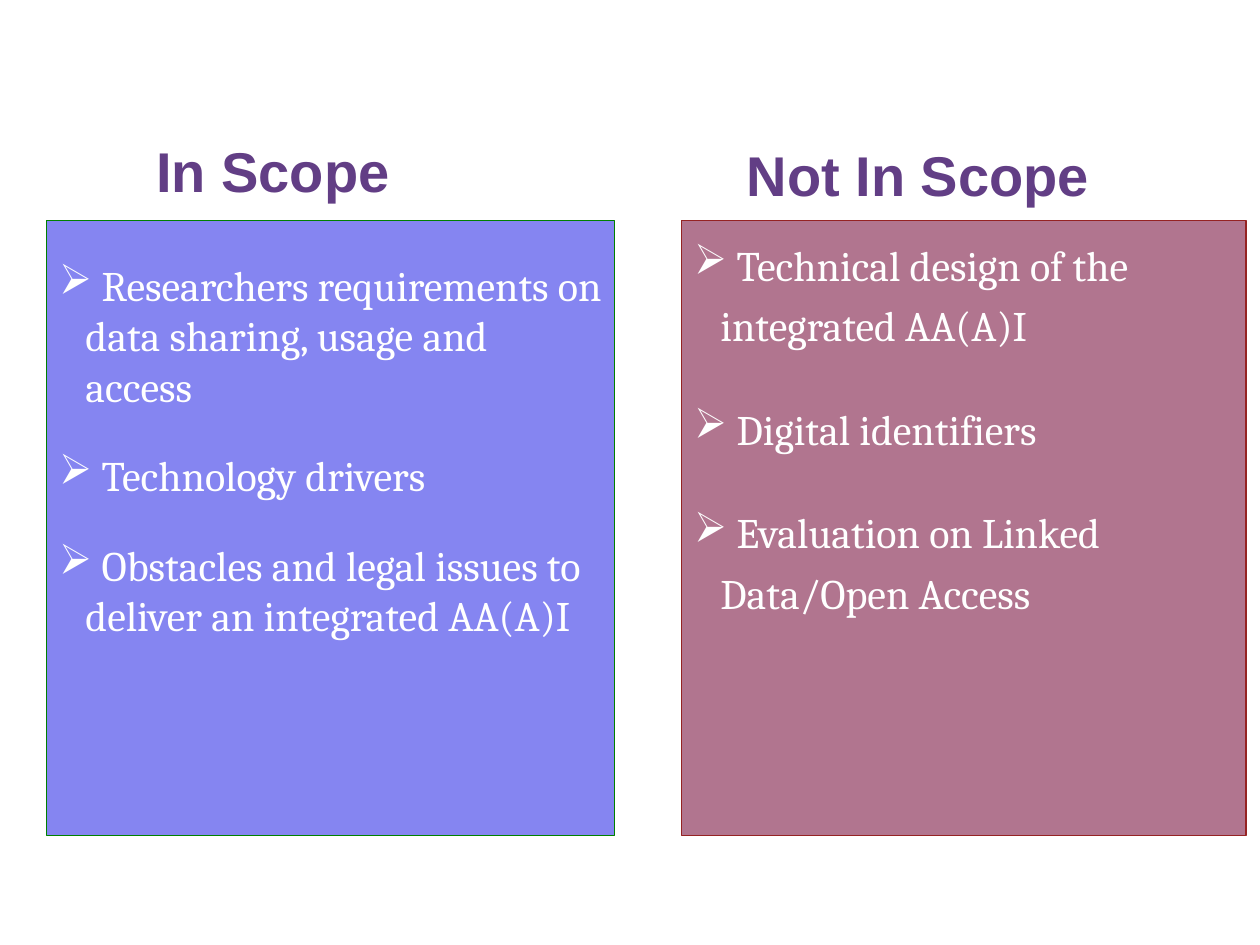
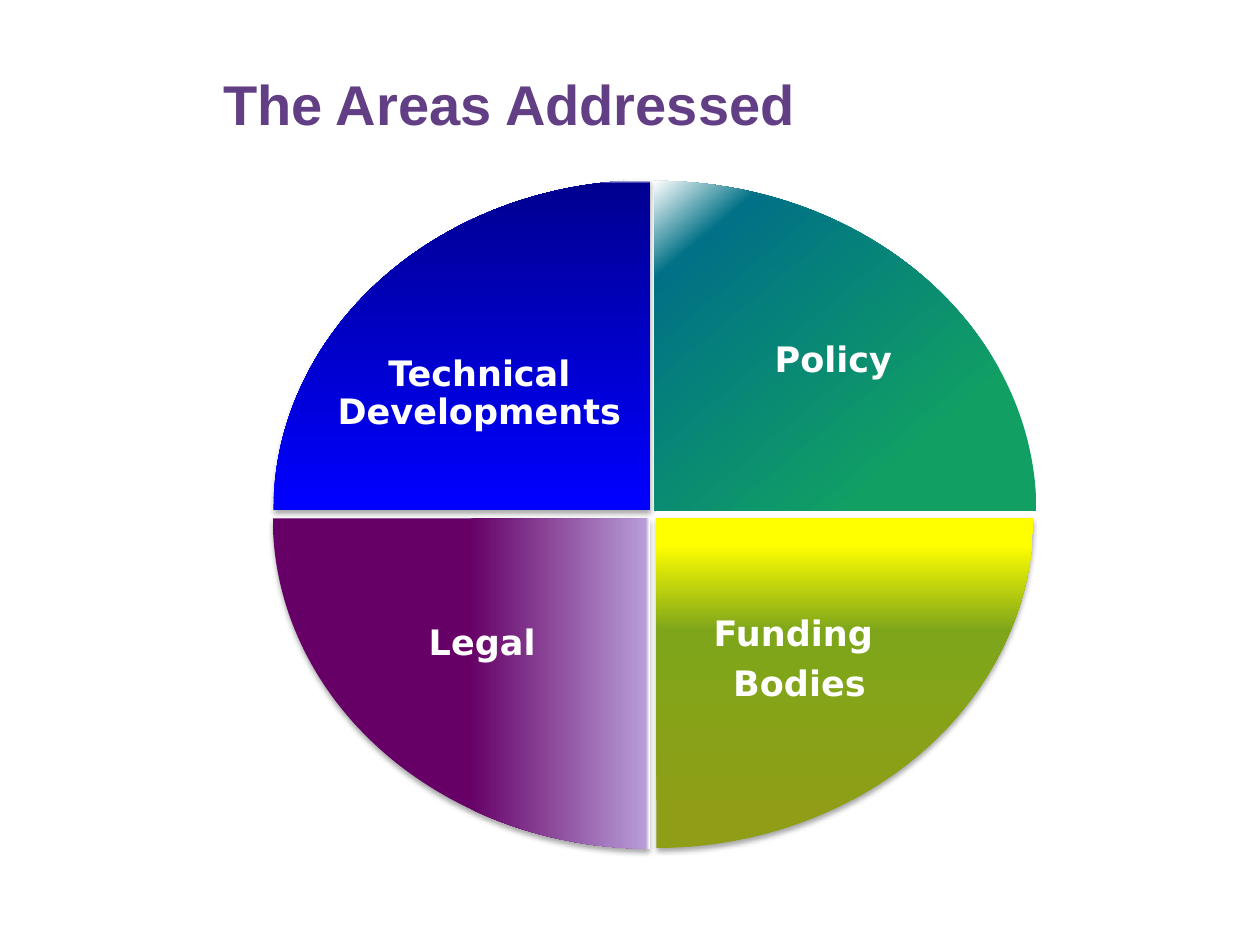
from lxml import etree
from pptx import Presentation
from pptx.dml.color import RGBColor
from pptx.enum import shapes, text
from pptx.oxml.ns import qn
from pptx.util import Inches, Pt

WHITE, PURPLE = "FFFFFF", "623E85"
HEADING = dict(font="Arial", size=32, color=PURPLE, bold=True)
ITEM = dict(font="Cambria", size=24, color=WHITE, after=3, bullet="➢", indent=0.21)
LABEL = dict(font="DejaVu Sans", size=20, color=WHITE, bold=True, line=0.9, after=7,
             align=text.PP_ALIGN.CENTER, anchor=text.MSO_ANCHOR.MIDDLE, inset=(0.14,) * 4)

SCOPE_PANELS = [
    dict(box=(0.37, 1.75, 4.51, 4.88), fill="0000E2", alpha=48, border="008000",
         items=[" Researchers requirements on data sharing, usage and access",
                " Technology drivers",
                " Obstacles and legal issues to deliver an integrated AA(A)I"],
         style=dict(before=19.3, inset=(0.1, 0.31, 0.1, 0.05))),
    dict(box=(5.41, 1.75, 4.48, 4.88), fill="B1758F", alpha=100, border="952323",
         items=[" Technical design of the integrated AA(A)I",
                " Digital identifiers",
                " Evaluation on Linked Data/Open Access"],
         style=dict(before=21.6, line=1.2, inset=(0.1, 0.07, 0.1, 0.05))),
]

AREAS = [
    dict(lines=["Technical Developments"], wedge=(2.17, 1.43, 2.99, 2.62), turn=0,
         label=(2.45, 2.2, 2.71, 1.86), angle=270, shadow=True,
         stops=[(2, "0000FF"), (99, "000090"), (100, WHITE)]),
    dict(lines=["Policy"], wedge=(5.4, 1.23, 2.62, 3.03), turn=90,
         label=(5, 1.94, 3.23, 1.86), angle=230, shadow=False,
         stops=[(24, "119F64"), (85, "007186"), (100, WHITE)]),
    dict(lines=["Legal "], wedge=(2.35, 3.93, 2.62, 2.99), turn=270,
         label=(2.28, 4.18, 3.19, 1.86), angle=0, shadow=True,
         stops=[(52, "660066"), (99, "B79CD7"), (100, WHITE)]),
    dict(lines=["Funding ", "Bodies"], wedge=(5.21, 4.11, 2.99, 2.62), turn=180,
         label=(4.92, 4.2, 2.85, 2.08), angle=270, shadow=True,
         stops=[(7, "8F9E16"), (66, "7FA61A"), (92, "FFFF00")]),
]


def rgb(value):
    return RGBColor.from_string(value)


def inches(box):
    return [Inches(v) for v in box]


def add_xml(parent, tag, **attrs):
    return etree.SubElement(parent, qn(tag), {k: str(v) for k, v in attrs.items()})


def write(sp, lines, font, size, color, bold=False, align=text.PP_ALIGN.LEFT,
          anchor=text.MSO_ANCHOR.TOP, inset=(0.1, 0.05, 0.1, 0.05),
          line=1.0, before=0, after=0, bullet=None, indent=0):
    tf = sp.text_frame
    tf.word_wrap = True
    tf.auto_size = text.MSO_AUTO_SIZE.NONE
    tf.vertical_anchor = anchor
    tf.margin_left, tf.margin_top, tf.margin_right, tf.margin_bottom = inches(inset)
    for i, content in enumerate(lines):
        p = tf.add_paragraph() if i else tf.paragraphs[0]
        p.alignment, p.line_spacing = align, line
        p.space_before, p.space_after = Pt(before if i else 0), Pt(after)
        if bullet:
            pPr = p._p.get_or_add_pPr()
            pPr.set("marL", str(Inches(indent)))
            pPr.set("indent", str(-Inches(indent)))
            add_xml(pPr, "a:buChar", char=bullet)
        r = p.add_run()
        r.text = content
        r.font.name, r.font.size, r.font.bold = font, Pt(size), bold
        r.font.color.rgb = rgb(color)


def add_titled_slide(prs, title, box):
    s = prs.slides.add_slide(prs.slide_layouts[5])
    sp = s.shapes.title
    sp.left, sp.top, sp.width, sp.height = inches(box)
    write(sp, [title], **HEADING)
    return s


def add_text(s, box, lines, **style):
    write(s.shapes.add_textbox(*inches(box)), lines, **style)


def add_panel(s, panel):
    sp = s.shapes.add_shape(shapes.MSO_SHAPE.RECTANGLE, *inches(panel["box"]))
    sp.shadow.inherit = False
    sp.fill.solid()
    sp.fill.fore_color.rgb = rgb(panel["fill"])
    if panel["alpha"] < 100:
        add_xml(sp._element.spPr.find(".//" + qn("a:srgbClr")), "a:alpha", val=panel["alpha"] * 1000)
    sp.line.color.rgb = rgb(panel["border"])
    sp.line.width = Pt(0.75)
    write(sp, panel["items"], **ITEM, **panel["style"])


def add_wedge(s, area):
    sp = s.shapes.add_shape(shapes.MSO_SHAPE.PIE_WEDGE, *inches(area["wedge"]))
    sp.rotation = area["turn"]
    sp.line.fill.background()
    sp.shadow.inherit = False
    sp.fill.gradient()
    grad = sp._element.spPr.find(qn("a:gradFill"))
    grad.clear()
    grad.set("rotWithShape", "0")
    stops = add_xml(grad, "a:gsLst")
    for position, color in area["stops"]:
        add_xml(add_xml(stops, "a:gs", pos=position * 1000), "a:srgbClr", val=color)
    add_xml(grad, "a:lin", ang=area["angle"] * 60000, scaled=0)
    if area["shadow"]:
        shadow = add_xml(sp._element.spPr.find(qn("a:effectLst")), "a:outerShdw",
                         blurRad=Pt(3.1), dist=Pt(1.8), dir=90 * 60000, rotWithShape=0)
        add_xml(add_xml(shadow, "a:srgbClr", val="000000"), "a:alpha", val=35000)


def main():
    prs = Presentation()
    prs.slide_width, prs.slide_height = Inches(10), Inches(7.5)

    s = add_titled_slide(prs, "In Scope", (1.14, 1.03, 2.59, 1.25))
    for panel in SCOPE_PANELS:
        add_panel(s, panel)
    add_text(s, (5.83, 0.96, 3.11, 1.25), ["Not In Scope"], line=1.2, **HEADING)

    s = add_titled_slide(prs, "The Areas Addressed", (1.67, 0.5, 7.5, 1.25))
    for area in AREAS:
        add_wedge(s, area)
        add_text(s, area["label"], area["lines"], **LABEL)

    prs.save("out.pptx")


if __name__ == "__main__":
    main()
